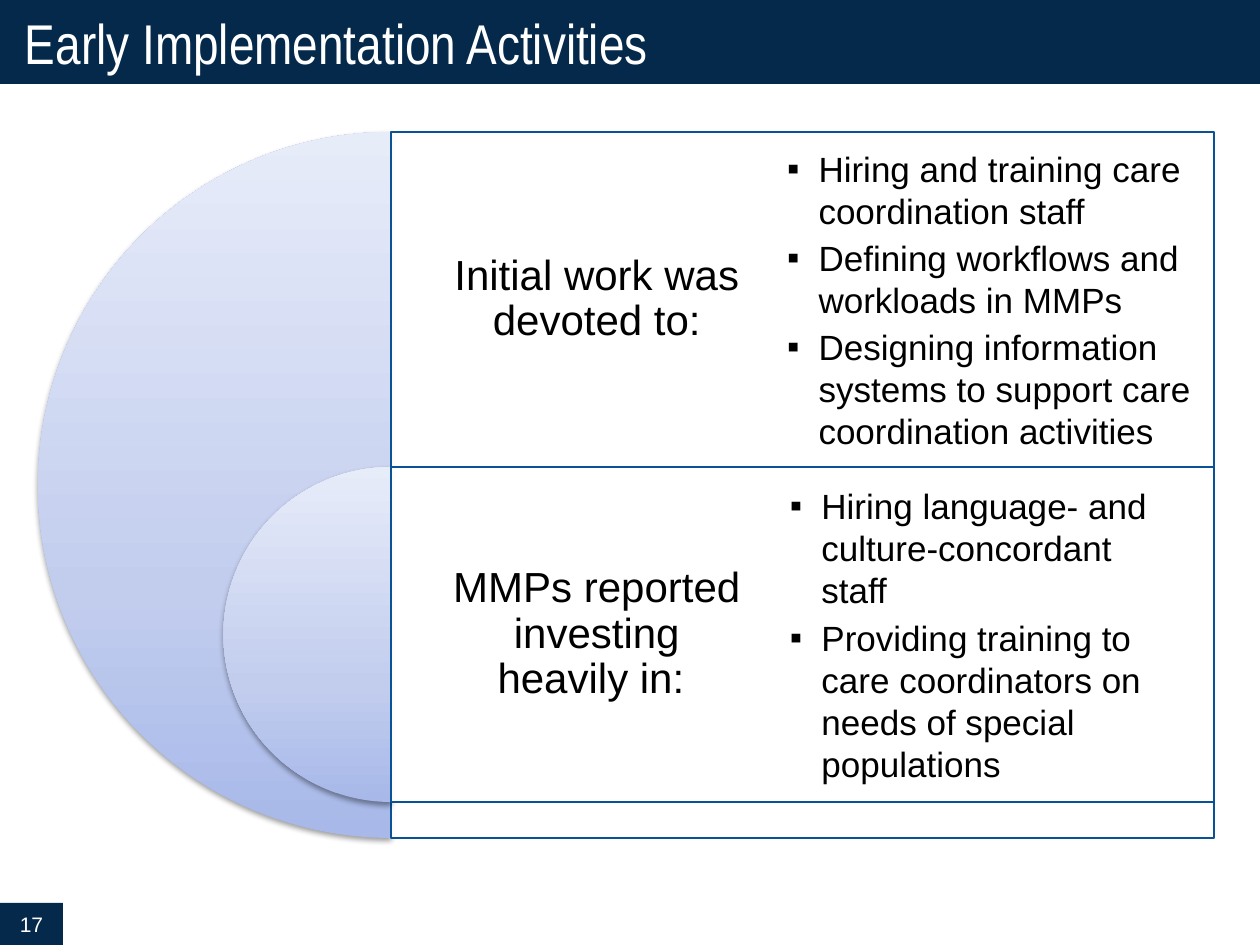
from copy import deepcopy

from lxml import etree
from pptx import Presentation
from pptx.dml.color import RGBColor
from pptx.enum.shapes import MSO_SHAPE
from pptx.enum.text import MSO_ANCHOR, PP_ALIGN
from pptx.oxml.ns import qn
from pptx.util import Emu, Pt

RECT, PIE = MSO_SHAPE.RECTANGLE, MSO_SHAPE.PIE
MIDDLE = MSO_ANCHOR.MIDDLE
LEFT, CENTER = PP_ALIGN.LEFT, PP_ALIGN.CENTER

NAVY = RGBColor(0x04, 0x29, 0x4A)
BLUE = RGBColor(0x08, 0x52, 0x95)
WHITE = RGBColor(0xFF, 0xFF, 0xFF)
BLACK = RGBColor(0x00, 0x00, 0x00)
SHADES = [
    (0, RGBColor(0xA7, 0xB8, 0xE9)),
    (0.35, RGBColor(0xC2, 0xCD, 0xEE)),
    (1, RGBColor(0xE7, 0xEC, 0xF9)),
]

SCALE = 914400 / 126
MID, TOP, WIDE, ROW = 391, 132, 823, 335

# Label, bullets, left and width of the bullets, size of the half disc
ROWS = [
    ("Initial work was devoted to:",
     ["Hiring and training care coordination staff",
      "Defining workflows and workloads in MMPs",
      "Designing information systems to support care coordination activities"],
     753, 510, 706),
    ("MMPs reported investing\nheavily in: ",
     ["Hiring language- and culture-concordant staff",
      "Providing training to care coordinators on needs of special populations"],
     756, 464, 335),
]


def px(num):
    return Emu(round(num * SCALE))


def add_sub(node, tag, **attrs):
    return etree.SubElement(node, qn(tag), attrs)


def add_form(slide, kind, *box):
    form = slide.shapes.add_shape(kind, *map(px, box))
    form.shadow.inherit = False
    form.line.fill.background()
    return form


def set_text(form, lines, size, color=BLACK, font="Arial", align=LEFT,
             pad=13, pad_y=13):
    frame = form.text_frame
    frame.word_wrap = True
    frame.vertical_anchor = MIDDLE
    frame.margin_left = frame.margin_right = px(pad)
    frame.margin_top = frame.margin_bottom = px(pad_y)
    for i, line in enumerate(lines):
        para = frame.add_paragraph() if i else frame.paragraphs[0]
        para.text = line
        para.alignment = align
        for run in para.runs:
            run.font.size = Pt(size)
            run.font.name = font
            run.font.color.rgb = color
    return frame.paragraphs


def add_bar(slide, box, text, size, **style):
    bar = add_form(slide, RECT, *box)
    bar.fill.solid()
    bar.fill.fore_color.rgb = NAVY
    set_text(bar, [text], size, WHITE, **style)


def add_half(slide, top, size):
    half = add_form(slide, PIE, MID - size / 2, top, size, size)
    half.adjustments[0], half.adjustments[1] = 54, 162
    # Three-stop gradient, dark at the foot
    fill = half.fill
    fill.gradient()
    fill.gradient_angle = 90
    stops = half._element.spPr.find(".//" + qn("a:gsLst"))
    stops.append(deepcopy(stops[-1]))
    for stop, (spot, color) in zip(fill.gradient_stops, SHADES):
        stop.position = spot
        stop.color.rgb = color
    # Soft shadow below
    glow = add_sub(half._element.spPr.find(qn("a:effectLst")), "a:outerShdw",
                   blurRad="40000", dist="20000", dir="5400000",
                   rotWithShape="0")
    tint = add_sub(glow, "a:srgbClr", val=str(BLACK))
    add_sub(tint, "a:alpha", val="38000")


def add_panel(slide, top, tall):
    panel = add_form(slide, RECT, MID, top, WIDE, tall)
    panel.fill.solid()
    panel.fill.fore_color.rgb = WHITE
    tint = panel._element.spPr.find(qn("a:solidFill"))[0]
    add_sub(tint, "a:alpha", val="90000")
    panel.line.color.rgb = BLUE
    panel.line.width = Pt(0.75)


def add_label(slide, top, text):
    box = slide.shapes.add_textbox(*map(px, (MID, top, WIDE / 2, ROW)))
    para = set_text(box, [text], 24, align=CENTER)[0]
    para.line_spacing = 0.9
    para.space_after = Pt(8.4)


def add_list(slide, left, top, wide, items):
    box = slide.shapes.add_textbox(*map(px, (left, top, wide, ROW)))
    for para in set_text(box, items, 20, pad=34, pad_y=34):
        para.space_after = Pt(3)
        props = para._p.get_or_add_pPr()
        props.set("marL", "228600")
        props.set("indent", "-228600")
        add_sub(props, "a:buFont", typeface="Arial")
        add_sub(props, "a:buChar", char="▪")


def main():
    deck = Presentation()
    deck.slide_width, deck.slide_height = px(1260), px(945)
    slide = deck.slides.add_slide(deck.slide_layouts[6])

    # Title band and page number
    add_bar(slide, (0, 0, 1260, 84), "Early Implementation Activities", 32,
            font="Arial Narrow", pad=25)
    add_bar(slide, (0, 903, 63, 42), "17", 12, align=CENTER, pad_y=6)

    # Nested half discs, each with its panel and label
    for i, (label, _, _, _, size) in enumerate(ROWS):
        top = TOP + i * ROW
        add_half(slide, top, size)
        add_panel(slide, top, size)
        add_label(slide, top, label)

    # Bullets beside the labels
    for i, (_, items, left, wide, _) in enumerate(ROWS):
        add_list(slide, left, TOP + i * ROW, wide, items)

    deck.save("out.pptx")


if __name__ == "__main__":
    main()
